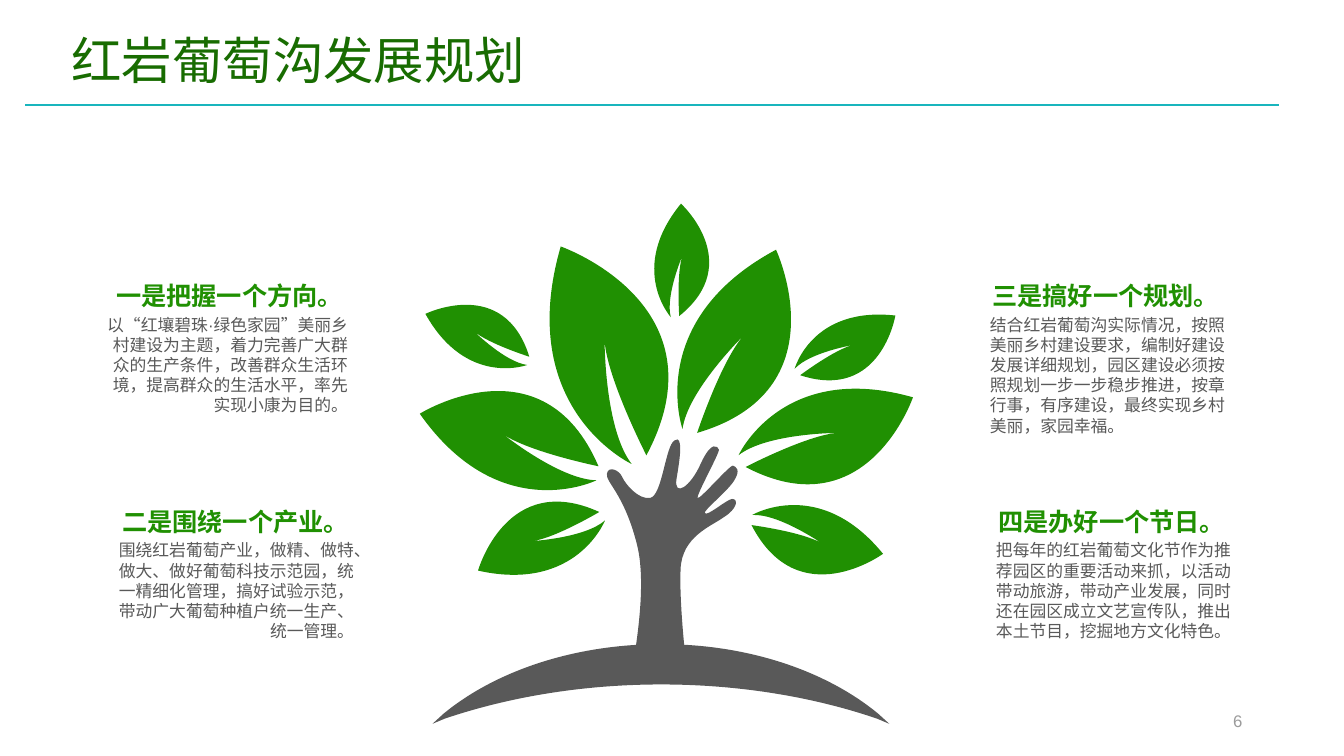
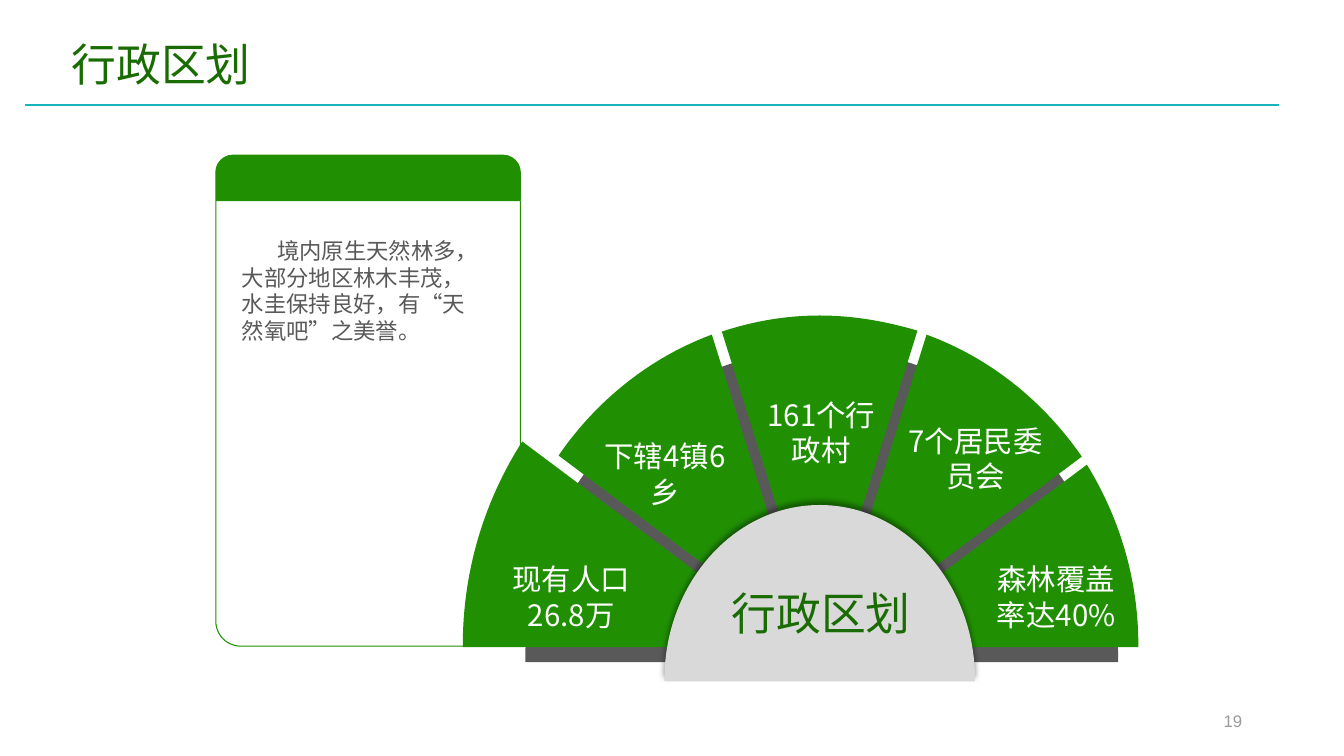
"""Build two slides on the grape valley: its development plan and its administrative divisions."""
import lxml.etree
import pptx
import pptx.dml.color
import pptx.enum.shapes
import pptx.enum.text
import pptx.oxml.ns
import pptx.util

COLORS = {
    "title": "186C01", "leaf": "209002", "trunk": "595959", "rule": "19B5BD",
    "number": "9B9B9B", "hub": "D9D9D9", "paper": "FFFFFF", "shadow": "000000",
}
RGB = {part: pptx.dml.color.RGBColor.from_string(code) for part, code in COLORS.items()}
LATIN, HAN = "Arial", "Noto Sans CJK SC"
CELL = pptx.util.Inches(0.01)
COLUMNS, ROWS = 1333, 750
LEFT, CENTER, RIGHT = (pptx.enum.text.PP_ALIGN.LEFT, pptx.enum.text.PP_ALIGN.CENTER,
                       pptx.enum.text.PP_ALIGN.RIGHT)
TOP, MIDDLE, BOTTOM = (pptx.enum.text.MSO_ANCHOR.TOP, pptx.enum.text.MSO_ANCHOR.MIDDLE,
                       pptx.enum.text.MSO_ANCHOR.BOTTOM)
qn = pptx.oxml.ns.qn


def write(shapes, box, text, size, color, face=LATIN, align=LEFT, anchor=TOP, bold=False, wrap=True):
    """Place a text box given in grid cells and return its paragraph."""
    frame = shapes.add_textbox(*[cells * CELL for cells in box]).text_frame
    frame.word_wrap = wrap
    frame.vertical_anchor = anchor
    frame.text = text
    paragraph = frame.paragraphs[0]
    paragraph.alignment = align
    run = paragraph.runs[0]
    run.font.size = pptx.util.Pt(size)
    run.font.bold = bold
    run.font.color.rgb = RGB[color]
    run.font.name = face
    lxml.etree.SubElement(run._r.get_or_add_rPr(), qn("a:ea"), typeface=HAN)
    return paragraph


def outline(shapes, start, stretches, color, left=0, top=0, scale=1):
    """Draw a closed outline; a pair is a straight stretch and six numbers are a Bezier curve."""
    def place(x, y):
        return (left + x * scale) * CELL, (top + y * scale) * CELL

    builder = shapes.build_freeform(*place(*start))
    builder.add_line_segments([place(*stretch[i:i + 2]) for stretch in stretches
                               for i in range(0, len(stretch), 2)])
    shape = builder.convert_to_shape()
    contour = next(shape.element.iter(qn("a:path")))
    steps = iter(contour.findall(qn("a:lnTo")))
    for stretch in stretches:
        step = next(steps)
        if len(stretch) == 6:
            step.tag = qn("a:cubicBezTo")
            for extra in (next(steps), next(steps)):
                step.append(extra[0])
                contour.remove(extra)
    shape.fill.solid()
    shape.fill.fore_color.rgb = RGB[color]
    shape.line.fill.background()
    shape.shadow.inherit = False
    return shape


deck = pptx.Presentation()
deck.slide_width, deck.slide_height = COLUMNS * CELL, ROWS * CELL

pages = []
for title, title_size, number in [("红岩葡萄沟发展规划", 36, "6"), ("行政区划", 32, "19")]:
    page = deck.slides.add_slide(deck.slide_layouts[6]).shapes
    rule = page.add_connector(pptx.enum.shapes.MSO_CONNECTOR.STRAIGHT,
                              25 * CELL, 104 * CELL, 1269 * CELL, 104 * CELL)
    rule.line.color.rgb = RGB["rule"]
    rule.line.width = pptx.util.Pt(1)
    lxml.etree.SubElement(rule.element.spPr, qn("a:effectLst"))
    heading = write(page, (61, 18, 1209, 77), title, title_size, "title", anchor=BOTTOM)
    heading.line_spacing = 0.9
    write(page, (942, 695, 300, 40), number, 12, "number", align=RIGHT, anchor=MIDDLE)
    pages.append(page)
plan, divisions = pages

tree = plan.add_group_shape().shapes
hand = [
    (677, 438, 674, 457, 671, 475), (668, 494, 685, 483, 695, 460),
    (706, 436, 712, 443, 713, 446), (714, 449, 690, 492, 692, 494),
    (694, 496, 724, 461, 727, 462), (730, 463, 735, 466, 728, 477),
    (721, 488, 698, 506, 699, 509), (701, 513, 720, 496, 726, 495),
    (733, 495, 731, 505, 718, 513), (706, 522, 676, 532, 675, 565),
    (674, 588, 677, 624, 679, 644), (679, 645), (630, 645), (631, 639),
    (635, 610, 639, 570, 632, 541), (619, 489, 600, 478, 602, 470),
    (603, 462, 614, 466, 617, 473), (620, 480, 633, 496, 645, 494),
    (657, 491, 660, 442, 669, 437), (670, 436, 671, 436, 672, 436),
]
outline(tree, (672, 436), hand, "trunk")

leaf_start = (1, 0.51)
leaf = [
    (1, 0.51, 0.69, 1, 0, 0.7), (0, 0.7, 0.35, 0, 0.97, 0.44),
    (0.97, 0.44, 0.61, 0.57, 0.44, 0.56), (0.44, 0.56, 0.83, 0.61, 1, 0.51),
]
for left, top, size, turn in [
    (422, 335, 184, 31.4), (503, 238, 223, 82.7), (641, 251, 197, 128.3),
    (732, 352, 179, 172.4), (738, 476, 133, 207.3), (468, 461, 133, 349.2),
    (424, 272, 111, 37.4), (626, 206, 111, 105.9), (786, 295, 111, 162.9),
]:
    outline(tree, leaf_start, leaf, "leaf", left, top, size).rotation = turn

hill = [
    (743, 639, 820, 666, 871, 708), (882, 718), (870, 713),
    (809, 692, 735, 679, 656, 679), (576, 679, 503, 692, 441, 713),
    (429, 718), (440, 708), (491, 666, 569, 639, 656, 639),
]
outline(tree, (656, 639), hill, "trunk")

goals = [
    ("一是把握一个方向。", "以“红壤碧珠·绿色家园”美丽乡村建设为主题，着力完善广大群众的生产条件，改善群众生活环境，提高群众的生活水平，率先实现小康为目的。"),
    ("二是围绕一个产业。", "围绕红岩葡萄产业，做精、做特、做大、做好葡萄科技示范园，统一精细化管理，搞好试验示范，带动广大葡萄种植户统一生产、统一管理。"),
    ("三是搞好一个规划。", "结合红岩葡萄沟实际情况，按照美丽乡村建设要求，编制好建设发展详细规划，园区建设必须按照规划一步一步稳步推进，按章行事，有序建设，最终实现乡村美丽，家园幸福。"),
    ("四是办好一个节日。", "把每年的红岩葡萄文化节作为推荐园区的重要活动来抓，以活动带动旅游，带动产业发展，同时还在园区成立文艺宣传队，推出本土节目，挖掘地方文化特色。"),
]
sides = [(86, 17, RIGHT), (972, 0, LEFT)]
for index, (goal, measures) in enumerate(goals):
    side, row = divmod(index, 2)
    left, shift, align = sides[side]
    left, top = left + 6 * row, 273 + 224 * row
    write(plan, (left, top + 34, 269, 111), measures, 12, "trunk", align=align)
    write(plan, (left + shift, top, 247, 40), goal, 18, "leaf", align=RIGHT, bold=True, wrap=False)

for box, corners, color in [
    ((214, 199, 302, 442), (0, 0.082), "paper"),
    ((214, 154, 302, 44), (0.387, 0), "leaf"),
]:
    card = divisions.add_shape(pptx.enum.shapes.MSO_SHAPE.ROUND_2_SAME_RECTANGLE,
                               *[cells * CELL for cells in box])
    card.adjustments[0], card.adjustments[1] = corners
    card.fill.solid()
    card.fill.fore_color.rgb = RGB[color]
    card.line.color.rgb = RGB["leaf"]
    card.line.width = pptx.util.Pt(0.75)
    card.shadow.inherit = False
forest = write(divisions, (230, 230, 259, 118),
               "境内原生天然林多，大部分地区林木丰茂，水圭保持良好，有“天然氧吧”之美誉。",
               16, "trunk", HAN)
forest._p.get_or_add_pPr().set("indent", str(35 * CELL))

fan_back = [(1109, 485, 977, 346, 815, 346), (652, 346, 521, 485, 521, 655), (521, 657), (1109, 657)]
outline(divisions, (1109, 655), fan_back, "trunk")

wedges = [
    ("现有人口26.8万", (489, 552), (459, 640),
     [(459, 642), (790, 642), (518, 438), (481, 496, 459, 565, 459, 640)]),
    ("下辖4镇6乡", (582, 430), (706, 332),
     [(644, 355, 591, 398, 554, 452), (802, 638)]),
    ("161个行政村", (737, 389), (910, 328),
     [(879, 319, 847, 313, 813, 313), (779, 313, 746, 319, 716, 329), (813, 638)]),
    ("7个居民委员会", (890, 415), (1073, 453),
     [(1035, 398, 982, 355, 919, 332), (823, 640)]),
    ("森林覆盖率达40%", (970, 552), (837, 642),
     [(1129, 642), (1129, 640), (1129, 574, 1110, 513, 1078, 461)]),
]
for fact, corner, start, stretches in wedges:
    outline(divisions, start, stretches, "leaf")
    write(divisions, (*corner, 155, 81), fact, 21, "paper", HAN, CENTER)

hub_arc = [(967, 579, 898, 501, 813, 501), (728, 501, 659, 579, 659, 674), (659, 676), (967, 676)]
hub = outline(divisions, (967, 674), hub_arc, "hub")
glow = lxml.etree.SubElement(
    hub.element.spPr.find(qn("a:effectLst")), qn("a:outerShdw"),
    blurRad=str(pptx.util.Pt(4)), dist=str(pptx.util.Pt(3)), dir=str(270 * 60000), rotWithShape="0")
tint = lxml.etree.SubElement(glow, qn("a:srgbClr"), val=COLORS["shadow"])
lxml.etree.SubElement(tint, qn("a:alpha"), val="40000")
write(divisions, (708, 576, 213, 64), "行政区划", 32, "title", HAN, CENTER)

deck.save("out.pptx")
